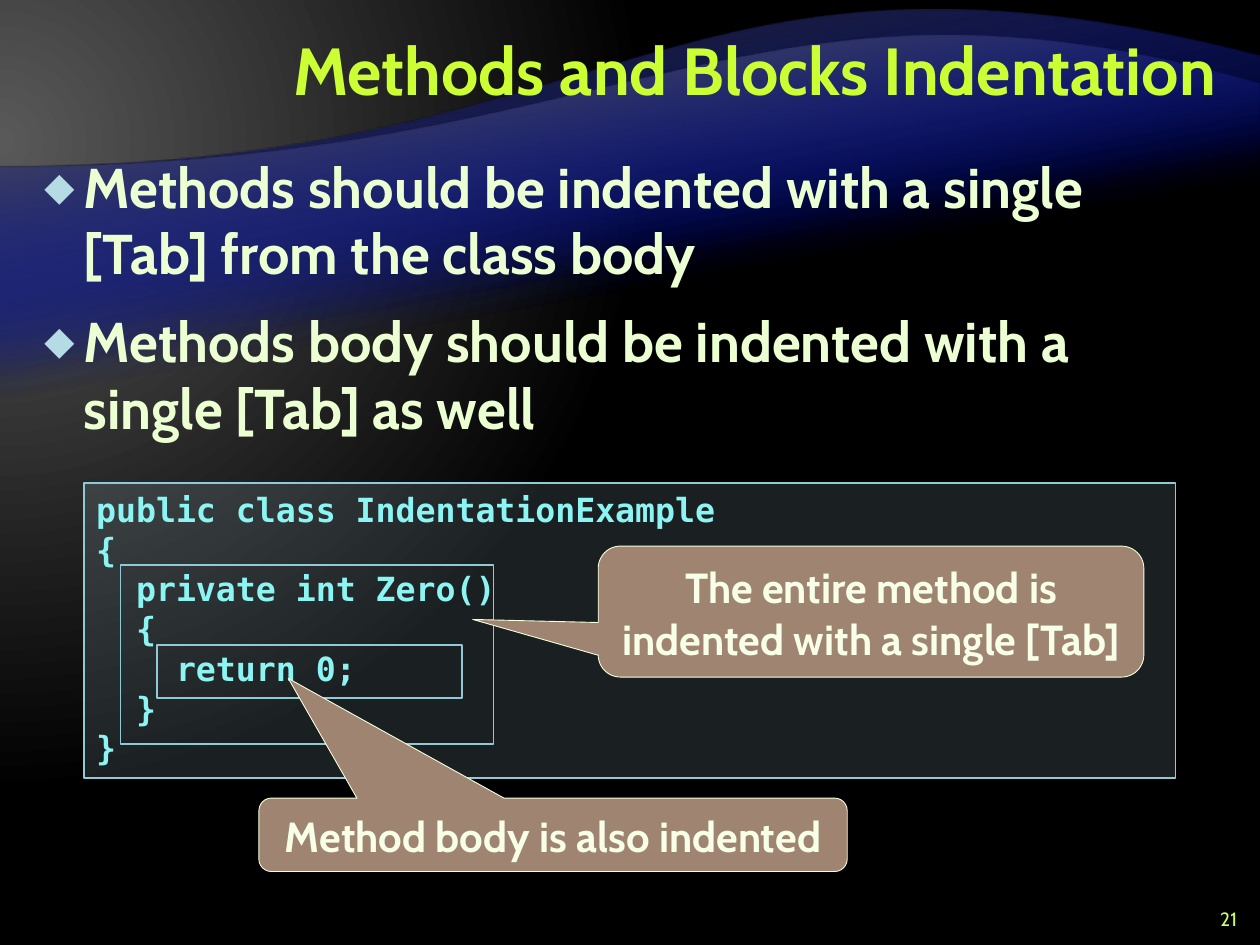
from lxml import etree
from pptx import Presentation
from pptx.dml.color import RGBColor
from pptx.enum.shapes import MSO_SHAPE
from pptx.enum.text import MSO_ANCHOR, MSO_AUTO_SIZE, PP_ALIGN
from pptx.oxml import parse_xml
from pptx.oxml.ns import qn
from pptx.util import Cm, Pt

RECT = MSO_SHAPE.RECTANGLE
CALLOUT = MSO_SHAPE.ROUNDED_RECTANGULAR_CALLOUT
TOP, MIDDLE = MSO_ANCHOR.TOP, MSO_ANCHOR.MIDDLE
LEFT, CENTER, RIGHT = PP_ALIGN.LEFT, PP_ALIGN.CENTER, PP_ALIGN.RIGHT
FIXED = MSO_AUTO_SIZE.NONE
WIDE, HIGH = 25.4, 19.05
SANS, MONO = "Cabin", "DejaVu Sans Mono"
HUES = {
    "title": "CCFF33", "body": "EBFFD2", "bullet": "B5DBE5", "page": "CCFF66",
    "panel": "B5DBE5", "frame": "90CAD7", "code": "8CF4F2",
    "note": "9F8471", "rim": "F5FFE0", "label": "F7FFE7",
    "glow": "595959", "night": "000000", "wave": "000D9E", "dusk": "262626",
}
CODE = """public class IndentationExample
{
  private int Zero()
  {
    return 0;
  }
}"""


def hue(name):
    """Return the colour of the given name."""
    return RGBColor.from_string(HUES[name])


def grad(stops, shade):
    """Return a gradient fill from (place, colour, opacity) stops and a shade tag."""
    marks = "".join(
        f'<a:gs pos="{place * 1000}"><a:srgbClr val="{HUES[name]}">'
        f'<a:alpha val="{alpha * 1000}"/></a:srgbClr></a:gs>'
        for place, name, alpha in stops)
    return parse_xml(
        '<a:gradFill xmlns:a="http://schemas.openxmlformats.org/drawingml/2006/main" '
        f'rotWithShape="1"><a:gsLst>{marks}</a:gsLst>{shade}</a:gradFill>')


def swap(root, fill):
    """Put a gradient in place of the solid fill found under root."""
    old = root.find(".//" + qn("a:solidFill"))
    old.getparent().replace(old, fill)


def place(shape, box):
    """Move and size a shape to a box in centimetres."""
    shape.left, shape.top, shape.width, shape.height = (Cm(n) for n in box)


def write(shape, lines, size, name, face=SANS, bold=True, align=LEFT,
          anchor=TOP, pitch=None):
    """Write lines into a shape, one paragraph each, and return the paragraphs."""
    frame = shape.text_frame
    frame.word_wrap = True
    frame.auto_size = FIXED
    frame.vertical_anchor = anchor
    frame.text = "\n".join(lines)
    for para in frame.paragraphs:
        para.alignment = align
        if pitch:
            para.line_spacing = Pt(pitch)
        font = para.font
        font.name, font.size, font.bold = face, Pt(size), bold
        font.color.rgb = hue(name)
    return frame.paragraphs


def add_wave(slide, box, curve, name):
    """Add to the layout a wave whose top edge is a curve across the box."""
    left, top, width, height = box
    right, low = left + width, top + height
    start = curve[0]
    build = slide.shapes.build_freeform(Cm(right), Cm(low))
    build.add_line_segments(
        [(Cm(left), Cm(low)), (Cm(left), Cm(start[1])), (Cm(right), Cm(top))])
    wave = build.convert_to_shape()
    wave.shadow.inherit = False
    wave.line.fill.background()
    wave.fill.solid()
    item = wave.element
    swap(item.spPr, grad([(65, "wave", 0), (100, name, 100)],
                         '<a:lin ang="15600000" scaled="0"/>'))
    edge = item.findall(".//" + qn("a:lnTo"))[2]
    bend = etree.Element(qn("a:cubicBezTo"))
    for x, y in curve:
        etree.SubElement(bend, qn("a:pt"), x=str(int(Cm(x - left))),
                         y=str(int(Cm(y - top))))
    bend.append(edge[0])
    edge.getparent().replace(edge, bend)
    slide.slide_layout.shapes.element.append(item)


def add_scene(slide, box):
    """Paint the glow and the two doubled waves over the box."""
    left, top, width, _ = box
    back = slide.background
    back.fill.solid()
    swap(slide.element, grad(
        [(0, "glow", 100), (83, "night", 100)],
        '<a:path path="circle"><a:fillToRect l="20000" t="30000" '
        'r="135000" b="100000"/></a:path>'))
    waves = [(1.14, 15.45, (13.56, -1.9), "dusk"),
             (1.7, 12.45, (15.19, -1.24), "glow")]
    for drop, tall, (x, y), name in waves * 2:
        curve = [(left + 12.7, top + 3.38), (left + x, top + y)]
        add_wave(slide, (left, top + drop, width, tall), curve, name)


def add_title(slide, box):
    """Set the slide title in the box."""
    title = slide.shapes.title
    place(title, box)
    write(title, ["Methods and Blocks Indentation"], 38, "title",
          align=RIGHT, anchor=MIDDLE, pitch=40)


def add_list(slide, box):
    """Set the bulleted rules in the box."""
    body = slide.placeholders[1]
    place(body, box)
    lines = ["Methods should be indented with a single [Tab] from the class body",
             "Methods body should be indented with a single [Tab] as well"]
    body.text_frame.text = "\n".join(lines)
    for para in body.text_frame.paragraphs:
        prop = para._p.get_or_add_pPr()
        prop.set("marL", str(int(Cm(0.79))))
        prop.set("indent", str(int(Cm(-0.79))))
        tint = etree.SubElement(prop, qn("a:buClr"))
        etree.SubElement(tint, qn("a:srgbClr"), val=HUES["bullet"])
        etree.SubElement(prop, qn("a:buSzPct"), val="70000")
        etree.SubElement(prop, qn("a:buFont"), typeface=SANS)
        etree.SubElement(prop, qn("a:buChar"), char="◆")
    paras = [(para, para._p.pPr) for para in body.text_frame.paragraphs]
    kept = [list(prop) + [dict(prop.attrib)] for _, prop in paras]
    for i, para in enumerate(write(body, lines, 32, "body", pitch=38)):
        para.space_before, para.space_after = Pt(6 if i else 0), Pt(6)
        prop = para._p.pPr
        *marks, attrs = kept[i]
        for key, val in attrs.items():
            prop.set(key, val)
        last = prop.find(qn("a:defRPr"))
        for mark in marks:
            last.addprevious(mark)


def add_box(slide, kind, box, line, width):
    """Add an unfilled shape with an outline."""
    shape = slide.shapes.add_shape(kind, *(Cm(n) for n in box))
    shape.shadow.inherit = False
    shape.fill.background()
    shape.line.color.rgb = hue(line)
    shape.line.width = Pt(width)
    return shape


def add_note(slide, box, text, tip):
    """Add a callout whose tail ends at the tip."""
    note = add_box(slide, CALLOUT, box, "rim", 0.5)
    note.fill.solid()
    note.fill.fore_color.rgb = hue("note")
    for i, part in enumerate((*tip, 0.17)):
        note.adjustments[i] = part
    write(note, [text], 24, "label", align=CENTER, anchor=MIDDLE, pitch=30)


def add_code(slide, box):
    """Add the code panel with its frames and callouts."""
    left, top, _, _ = box
    panel = add_box(slide, RECT, box, "frame", 1)
    panel.fill.solid()
    panel.fill.fore_color.rgb = hue("panel")
    tint = panel.element.spPr.find(qn("a:solidFill"))[0]
    etree.SubElement(tint, qn("a:alpha"), val="15000")
    write(panel, CODE.split("\n"), 19, "code", face=MONO, pitch=22.7)
    for x, y, wide, tall in [(0.74, 1.65, 7.52, 3.61), (1.48, 3.27, 6.15, 1.07)]:
        add_box(slide, RECT, (left + x, top + y, wide, tall), "frame", 1)
    add_note(slide, (left + 10.37, top + 1.27, 11, 2.64),
             "The entire method is indented with a single [Tab]", (-0.73, 0.06))
    add_note(slide, (left + 3.53, top + 6.35, 11.86, 1.48),
             "Method body is also indented", (-0.45, -2.13))


def add_page(slide, box):
    """Add the page number in the box."""
    page = slide.shapes.add_textbox(*(Cm(n) for n in box))
    write(page, ["21"], 11, "page", bold=False, align=RIGHT, anchor=MIDDLE)


def main():
    """Build and save the slide."""
    deck = Presentation()
    deck.slide_width, deck.slide_height = Cm(WIDE), Cm(HIGH)
    slide = deck.slides.add_slide(deck.slide_layouts[1])
    add_scene(slide, (0, 0, WIDE, HIGH))
    add_title(slide, (5.08, 0.21, 19.69, 2.54))
    add_list(slide, (0.64, 2.96, 24.13, 15.66))
    add_code(slide, (1.69, 9.74, 22.01, 5.94))
    add_page(slide, (23.92, 18.2, 1.27, 0.64))
    deck.save("out.pptx")


if __name__ == "__main__":
    main()
